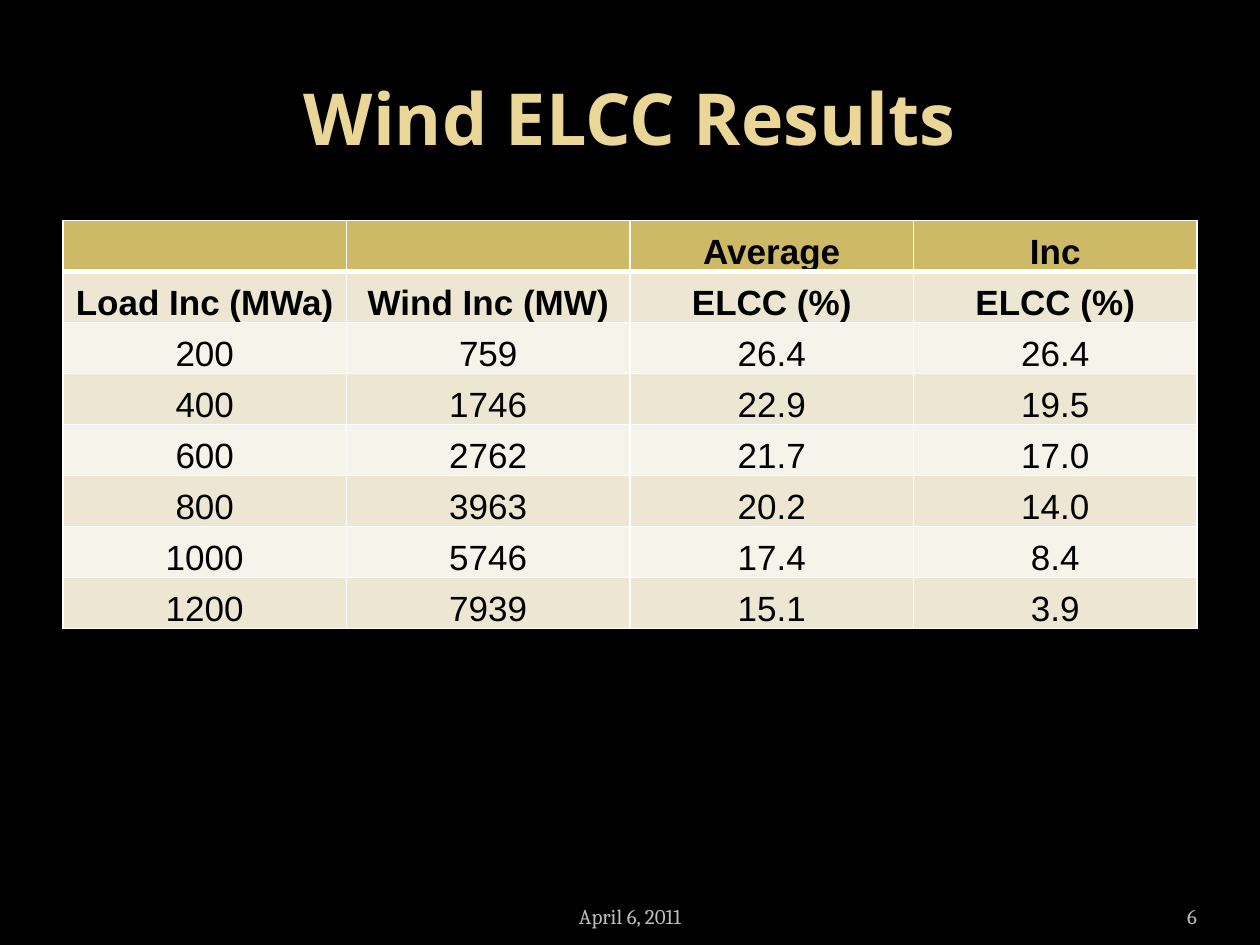
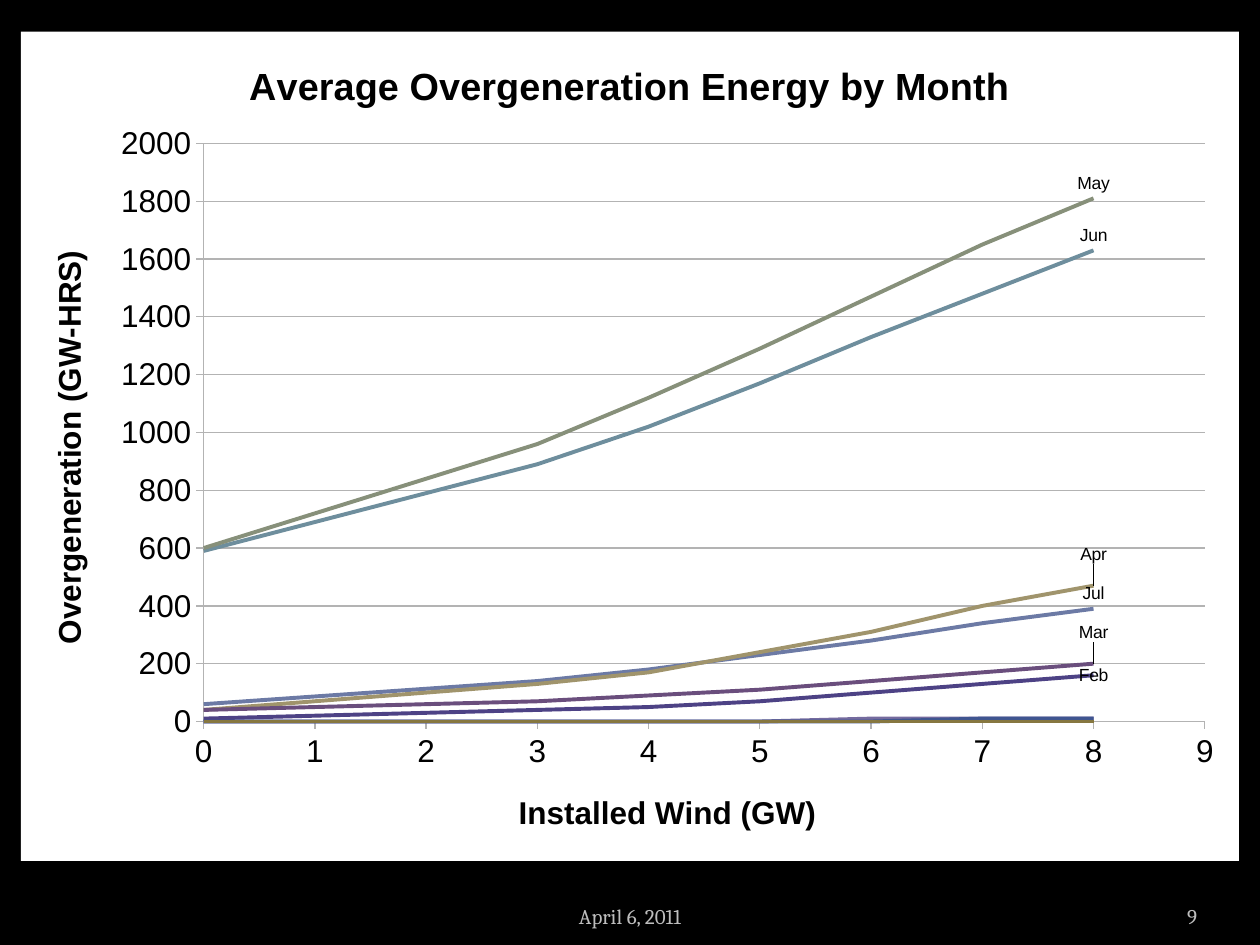
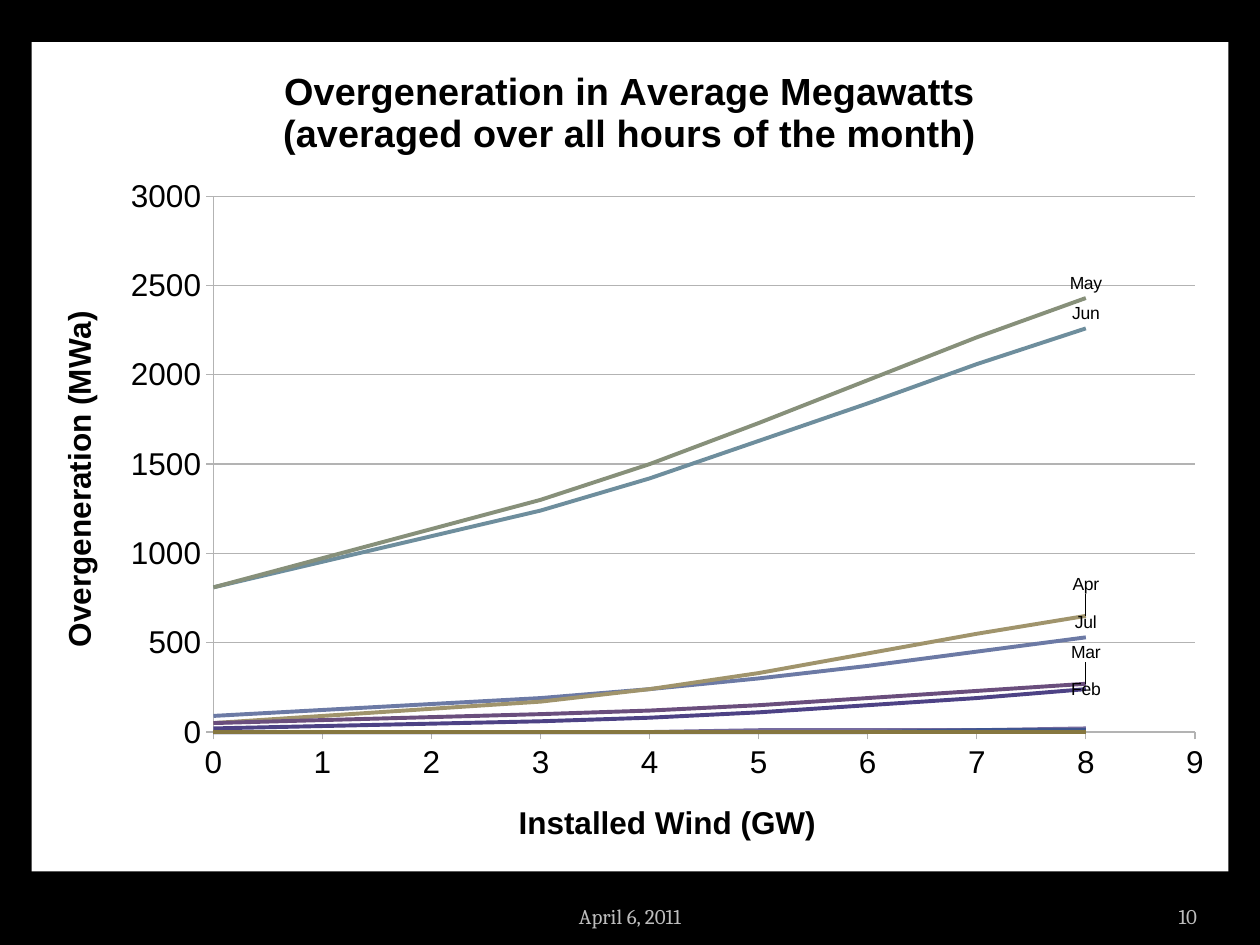
"""Build three slides on wind capacity credit and monthly overgeneration."""
from lxml.etree import SubElement
from pptx import Presentation
from pptx.chart.data import XyChartData
from pptx.dml.color import RGBColor
from pptx.enum.chart import XL_CHART_TYPE as ChartType
from pptx.enum.chart import XL_LABEL_POSITION as LabelPos
from pptx.enum.chart import XL_TICK_MARK as TickMark
from pptx.enum.text import MSO_ANCHOR as Anchor
from pptx.enum.text import PP_ALIGN as Align
from pptx.oxml import parse_xml
from pptx.oxml.ns import nsdecls, qn
from pptx.util import Pt

BLACK = RGBColor(0x00, 0x00, 0x00)
WHITE = RGBColor(0xFF, 0xFF, 0xFF)
TITLE_GOLD = RGBColor(0xEA, 0xD6, 0x96)
HEADER_GOLD = RGBColor(0xCE, 0xB9, 0x66)
BAND_DARK = RGBColor(0xED, 0xE6, 0xD3)
BAND_LIGHT = RGBColor(0xF6, 0xF3, 0xEA)
FOOTER_GREY = RGBColor(0xBD, 0xBD, 0xBD)
GRID_GREY = RGBColor(0xB3, 0xB3, 0xB3)

SERIES_COLOURS = {
    "Series 1": RGBColor(0x86, 0x77, 0x40),
    "Series 2": RGBColor(0x5F, 0x70, 0x50),
    "Series 3": RGBColor(0x3F, 0x73, 0x85),
    "Series 4": RGBColor(0x3F, 0x55, 0x90),
    "Feb": RGBColor(0x4D, 0x42, 0x85),
    "Mar": RGBColor(0x6A, 0x4E, 0x7D),
    "Apr": RGBColor(0xA0, 0x94, 0x6C),
    "May": RGBColor(0x87, 0x90, 0x7A),
    "Jun": RGBColor(0x6E, 0x8E, 0x9D),
    "Jul": RGBColor(0x6C, 0x7A, 0xA5),
    "Series 11": RGBColor(0x75, 0x6B, 0x9E),
    "Series 12": RGBColor(0x8B, 0x78, 0x98),
}
RAISED_LABELS = {"Mar": -0.02, "Apr": -0.02}

INSTALLED_GW = (0, 3, 4, 5, 6, 7, 8)
FLAT = (0,) * 7
LATE_RISE = (0, 0, 0, 0, 0, 10, 10)
ENERGY = {
    "Series 1": FLAT,
    "Series 2": FLAT,
    "Series 3": FLAT,
    "Series 4": LATE_RISE,
    "Feb": (10, 40, 50, 70, 100, 130, 160),
    "Mar": (40, 70, 90, 110, 140, 170, 200),
    "Apr": (40, 130, 170, 240, 310, 400, 470),
    "May": (600, 960, 1120, 1290, 1470, 1650, 1810),
    "Jun": (590, 890, 1020, 1170, 1330, 1480, 1630),
    "Jul": (60, 140, 180, 230, 280, 340, 390),
    "Series 11": (0, 0, 0, 0, 10, 10, 10),
    "Series 12": FLAT,
}
MEGAWATTS = {
    "Series 1": FLAT,
    "Series 2": FLAT,
    "Series 3": FLAT,
    "Series 4": LATE_RISE,
    "Feb": (20, 60, 80, 110, 150, 190, 240),
    "Mar": (50, 100, 120, 150, 190, 230, 270),
    "Apr": (50, 170, 240, 330, 440, 550, 650),
    "May": (810, 1300, 1500, 1730, 1970, 2210, 2430),
    "Jun": (810, 1240, 1420, 1630, 1840, 2060, 2260),
    "Jul": (90, 190, 240, 300, 370, 450, 530),
    "Series 11": (0, 0, 0, 10, 10, 10, 20),
    "Series 12": FLAT,
}
ELCC_ROWS = (
    ("", "", "Average", "Inc"),
    ("Load Inc (MWa)", "Wind Inc (MW)", "ELCC (%)", "ELCC (%)"),
    ("200", "759", "26.4", "26.4"),
    ("400", "1746", "22.9", "19.5"),
    ("600", "2762", "21.7", "17.0"),
    ("800", "3963", "20.2", "14.0"),
    ("1000", "5746", "17.4", "8.4"),
    ("1200", "7939", "15.1", "3.9"),
)


def write(paragraph, words, font_name, size, colour, bold=False, align=None):
    """Add one styled run to a paragraph."""
    if align is not None:
        paragraph.alignment = align
    run = paragraph.add_run()
    run.text = words
    run.font.name = font_name
    run.font.size = Pt(size)
    run.font.bold = bold
    run.font.color.rgb = colour


def add_label(slide, box, words, font_name, size, colour, align,
              anchor=Anchor.BOTTOM, bold=False, side_inset=7.2):
    """Add a wrapped line of text in a box given in points."""
    frame = slide.shapes.add_textbox(*map(Pt, box)).text_frame
    frame.word_wrap = True
    frame.vertical_anchor = anchor
    frame.margin_left = frame.margin_right = Pt(side_inset)
    write(frame.paragraphs[0], words, font_name, size, colour, bold, align)


def add_page(deck, number):
    """Add a black slide with its date and page number."""
    slide = deck.slides.add_slide(deck.slide_layouts[6])
    slide.background.fill.solid()
    slide.background.fill.fore_color.rgb = BLACK
    add_label(slide, (624, 505.5, 60, 28.75), str(number), "Cambria", 12,
              FOOTER_GREY, Align.RIGHT, side_inset=0)
    add_label(slide, (246, 505.5, 228, 28.75), "April 6, 2011", "Cambria", 12,
              FOOTER_GREY, Align.CENTER)
    return slide


def set_borders(cell, bottom, top):
    """Draw white borders round a cell, widths in points."""
    properties = cell._tc.get_or_add_tcPr()
    widths = {"lnL": 1, "lnR": 1, "lnT": top, "lnB": bottom}
    for place, (side, width) in enumerate(widths.items()):
        properties.insert(place, parse_xml(
            f'<a:{side} {nsdecls("a")} w="{Pt(width)}"><a:solidFill>'
            f'<a:srgbClr val="{WHITE}"/></a:solidFill></a:{side}>'))


def add_elcc_table(slide):
    """Add the banded table of wind ELCC results."""
    row_height = 29.16
    table = slide.shapes.add_table(
        len(ELCC_ROWS), 4, Pt(36), Pt(126), Pt(648),
        Pt(row_height * len(ELCC_ROWS))).table
    table.horz_banding = False
    for r, words_in_row in enumerate(ELCC_ROWS):
        table.rows[r].height = Pt(row_height)
        band = HEADER_GOLD if r == 0 else BAND_DARK if r % 2 else BAND_LIGHT
        for c, words in enumerate(words_in_row):
            cell = table.cell(r, c)
            cell.fill.solid()
            cell.fill.fore_color.rgb = band
            set_borders(cell, 3 if r == 0 else 1, 3 if r == 1 else 1)
            cell.vertical_anchor = Anchor.BOTTOM
            cell.margin_left = cell.margin_right = 0
            cell.margin_top = cell.margin_bottom = 0
            if words:
                write(cell.text_frame.paragraphs[0], words, "Arial", 20,
                      BLACK, r < 2, Align.CENTER)


def style_axis(axis, title, top, step, grid):
    """Scale and title an axis that starts at zero."""
    axis.minimum_scale, axis.maximum_scale, axis.major_unit = 0, top, step
    axis.has_major_gridlines = grid
    axis.major_tick_mark = TickMark.OUTSIDE
    axis.minor_tick_mark = TickMark.NONE
    axis.format.line.color.rgb = GRID_GREY
    axis.tick_labels.number_format = "General"
    axis.tick_labels.number_format_is_linked = False
    if grid:
        axis.major_gridlines.format.line.color.rgb = GRID_GREY
    write(axis.axis_title.text_frame.paragraphs[0], title, "Arial", 18, BLACK,
          True)


def make_layout(**places):
    """Return a manual chart layout with the given fractions."""
    layout = parse_xml(f'<c:layout {nsdecls("c")}><c:manualLayout/></c:layout>')
    for key, value in places.items():
        SubElement(layout[0], qn(f"c:{key}")).set("val", str(value))
    return layout


def name_last_point(series):
    """Label the end of a line with its month."""
    label = series.points[len(INSTALLED_GW) - 1].data_label
    label.font.size = Pt(10)
    label.font.name = "Arial"
    label.font.color.rgb = BLACK
    label.position = LabelPos.CENTER if series.name == "Feb" else LabelPos.ABOVE
    for shown in series._element.iter(qn("c:showVal")):
        shown.set("val", "0")
    for mark in series._element.iter(qn("c:dLbl")):
        mark.find(qn("c:showSerName")).set("val", "1")
        if series.name in RAISED_LABELS:
            mark.find(qn("c:idx")).addnext(
                make_layout(x=0, y=RAISED_LABELS[series.name]))


def add_month_chart(slide, box, title_lines, value_title, top, step, months,
                    plot_box):
    """Add a white line chart of overgeneration against installed wind."""
    data = XyChartData()
    for month, values in months.items():
        line = data.add_series(month)
        for gigawatts, value in zip(INSTALLED_GW, values):
            line.add_data_point(gigawatts, value)
    chart = slide.shapes.add_chart(ChartType.XY_SCATTER_LINES_NO_MARKERS,
                                   *map(Pt, box), data).chart
    chart.has_legend = False
    chart.font.name = "Arial"
    chart.font.size = Pt(18)
    chart.font.color.rgb = BLACK
    chart._chartSpace.find(qn("c:txPr")).addprevious(parse_xml(
        f'<c:spPr {nsdecls("c", "a")}><a:solidFill><a:srgbClr val="{WHITE}"/>'
        '</a:solidFill><a:ln><a:noFill/></a:ln></c:spPr>'))
    heading = chart.chart_title.text_frame
    for i, words in enumerate(title_lines):
        paragraph = heading.add_paragraph() if i else heading.paragraphs[0]
        write(paragraph, words, "Arial", 21.6, BLACK, True)
    style_axis(chart.category_axis, "Installed Wind (GW)", 9, 1, False)
    style_axis(chart.value_axis, value_title, top, step, True)

    plot = chart.plots[0]
    plot.vary_by_categories = False
    for series in plot.series:
        series.smooth = False
        series.format.line.width = Pt(2.25)
        series.format.line.color.rgb = SERIES_COLOURS[series.name]
        if not series.name.startswith("Series"):
            name_last_point(series)

    area = chart._chartSpace.chart.plotArea
    for automatic in area.findall(qn("c:layout")):
        area.remove(automatic)
    x, y, w, h = plot_box
    area.insert(0, make_layout(layoutTarget="inner", xMode="edge",
                               yMode="edge", x=x, y=y, w=w, h=h))


def main():
    """Build the deck and save it."""
    deck = Presentation()
    deck.slide_width, deck.slide_height = Pt(720), Pt(540)

    results = add_page(deck, 6)
    add_label(results, (36, 21.6, 648, 90), "Wind ELCC Results", "Open Sans",
              41, TITLE_GOLD, Align.CENTER, Anchor.MIDDLE, True)
    add_elcc_table(results)

    add_month_chart(add_page(deck, 9), (12, 18, 696, 474),
                    ["Average Overgeneration Energy by Month"],
                    "Overgeneration (GW-HRS)", 2000, 200, ENERGY,
                    (0.15, 0.135, 0.822, 0.697))
    add_month_chart(add_page(deck, 10), (18, 24, 684, 474),
                    ["Overgeneration in Average Megawatts",
                     "(averaged over all hours of the month)"],
                    "Overgeneration (MWa)", 3000, 500, MEGAWATTS,
                    (0.152, 0.186, 0.82, 0.646))
    deck.save("out.pptx")


if __name__ == "__main__":
    main()
